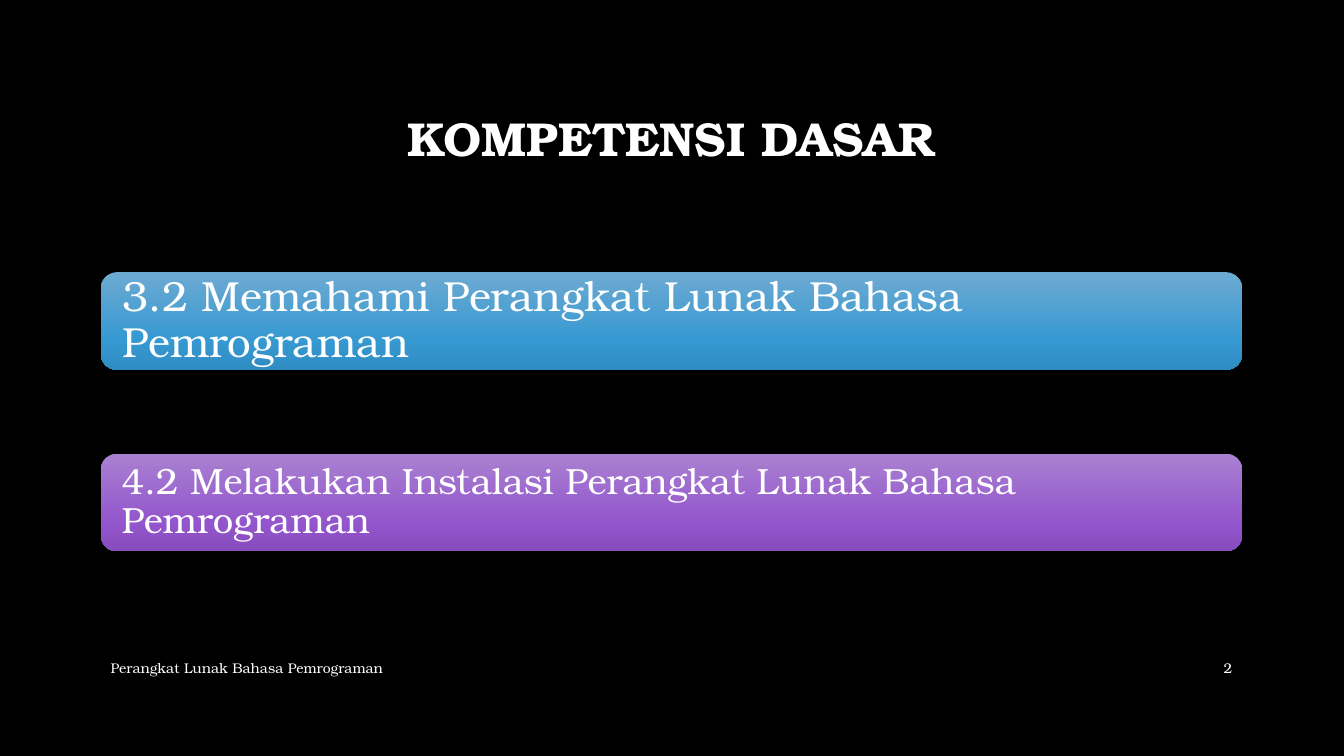
from lxml import etree
from pptx import Presentation
from pptx.dml.color import RGBColor
from pptx.enum.shapes import MSO_SHAPE
from pptx.enum.text import MSO_ANCHOR, PP_ALIGN
from pptx.oxml.ns import qn
from pptx.util import Inches, Pt

ROUNDED = MSO_SHAPE.ROUNDED_RECTANGLE
MIDDLE = MSO_ANCHOR.MIDDLE
LEFT, CENTER, RIGHT = PP_ALIGN.LEFT, PP_ALIGN.CENTER, PP_ALIGN.RIGHT

FONT = "TeX Gyre Bonum"
WHITE = "FFFFFF"
SLIDE_WIDTH, SLIDE_HEIGHT = 13.33, 7.5
MARGIN, CONTENT_WIDTH = 1, 11.32
BAR_TOP, BAR_PITCH, BAR_HEIGHT = 2.7, 1.8, 0.97
STOP_POSITIONS = (0, 69, 100)

# text, font size, inset, gradient colours from top to bottom
COMPETENCIES = [
    ("3.2 Memahami Perangkat Lunak Bahasa Pemrograman", 30, 0.17,
     ("6DAAD2", "3799D2", "2F8CC2")),
    ("4.2 Melakukan Instalasi Perangkat Lunak Bahasa Pemrograman", 26, 0.16,
     ("A981D1", "9456CD", "864BBC")),
]


def color(value):
    return RGBColor.from_string(value)


def inches(box):
    return [Inches(length) for length in box]


def write(shape, text, size, align=LEFT, bold=False, spacing=1.0):
    frame = shape.text_frame
    frame.word_wrap = True
    frame.vertical_anchor = MIDDLE
    para = frame.paragraphs[0]
    para.text = text
    para.alignment = align
    para.line_spacing = spacing
    para.font.name = FONT
    para.font.size = Pt(size)
    para.font.bold = bold
    para.font.color.rgb = color(WHITE)


def fill_gradient(shape, colors):
    """Fill from top to bottom with one stop for each colour."""
    shape.fill.gradient()
    shape.fill.gradient_angle = 270
    stops = shape._element.spPr.find(qn("a:gradFill")).find(qn("a:gsLst"))
    for stop in list(stops):
        stops.remove(stop)
    for position, value in zip(STOP_POSITIONS, colors):
        stop = etree.SubElement(stops, qn("a:gs"), pos=str(position * 1000))
        etree.SubElement(stop, qn("a:srgbClr"), val=value)


def add_title(page, box, text):
    title = page.shapes.title
    title.left, title.top, title.width, title.height = inches(box)
    write(title, text, 34, CENTER, bold=True, spacing=0.9)


def add_bar(page, box, text, size, inset, colors):
    bar = page.shapes.add_shape(ROUNDED, *inches(box))
    bar.shadow.inherit = False
    bar.line.fill.background()
    fill_gradient(bar, colors)
    frame = bar.text_frame
    frame.margin_left = frame.margin_right = Inches(inset)
    frame.margin_top = frame.margin_bottom = 0
    write(bar, text, size, spacing=0.9)


def add_competencies(page, box):
    left, top, width, height = box
    for row, competency in enumerate(COMPETENCIES):
        add_bar(page, (left, top + row * BAR_PITCH, width, height), *competency)


def add_footer(page, box, text, number):
    left, top, width, height = box
    number_width = 0.82
    number_left = left + width - number_width
    note = page.shapes.add_textbox(*inches((left, top, 7.3, height)))
    write(note, text, 10)
    counter = page.shapes.add_textbox(
        *inches((number_left, top, number_width, height)))
    write(counter, number, 10, RIGHT)


def main():
    deck = Presentation()
    deck.slide_width, deck.slide_height = Inches(SLIDE_WIDTH), Inches(SLIDE_HEIGHT)
    page = deck.slides.add_slide(deck.slide_layouts[5])
    page.background.fill.solid()
    page.background.fill.fore_color.rgb = color("000000")
    add_title(page, (MARGIN, 0.67, CONTENT_WIDTH, 1.45), "KOMPETENSI DASAR")
    add_competencies(page, (MARGIN, BAR_TOP, CONTENT_WIDTH, BAR_HEIGHT))
    add_footer(page, (MARGIN, 6.43, CONTENT_WIDTH, 0.4),
               "Perangkat Lunak Bahasa Pemrograman", "2")
    deck.save("out.pptx")


if __name__ == "__main__":
    main()
